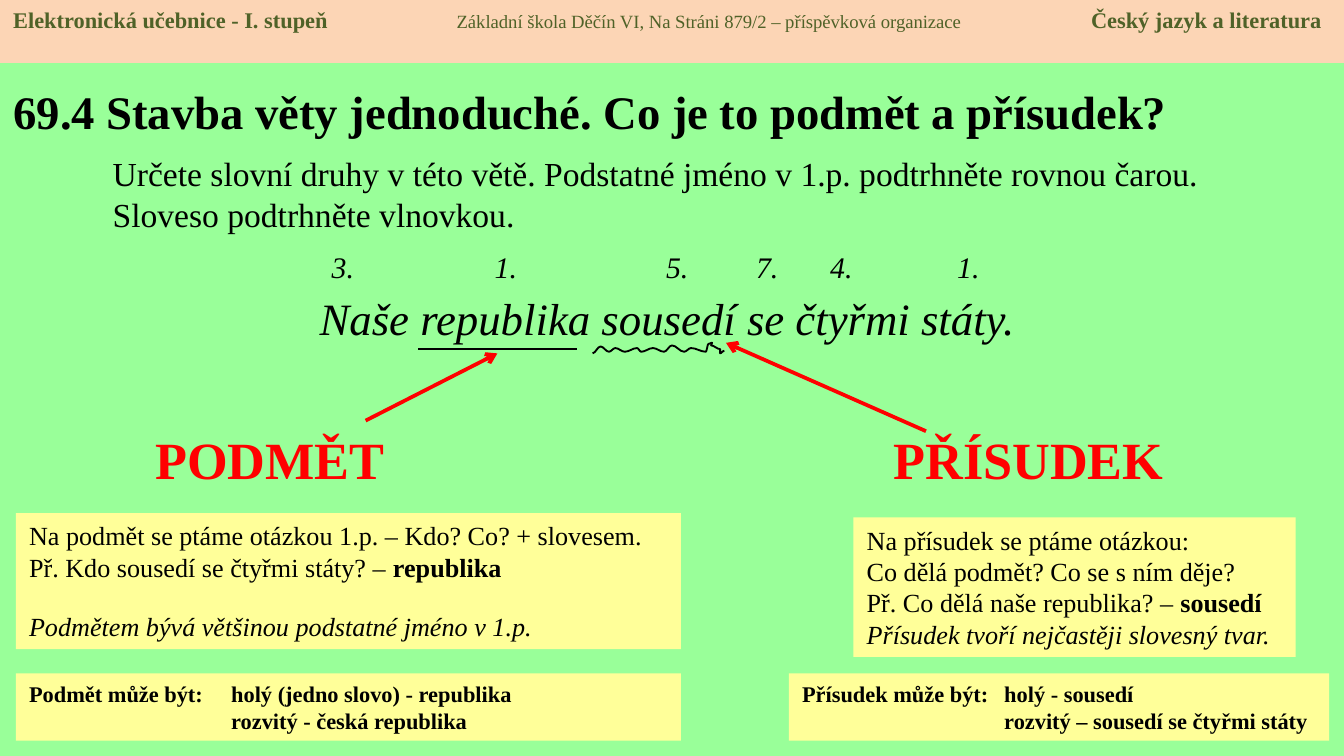
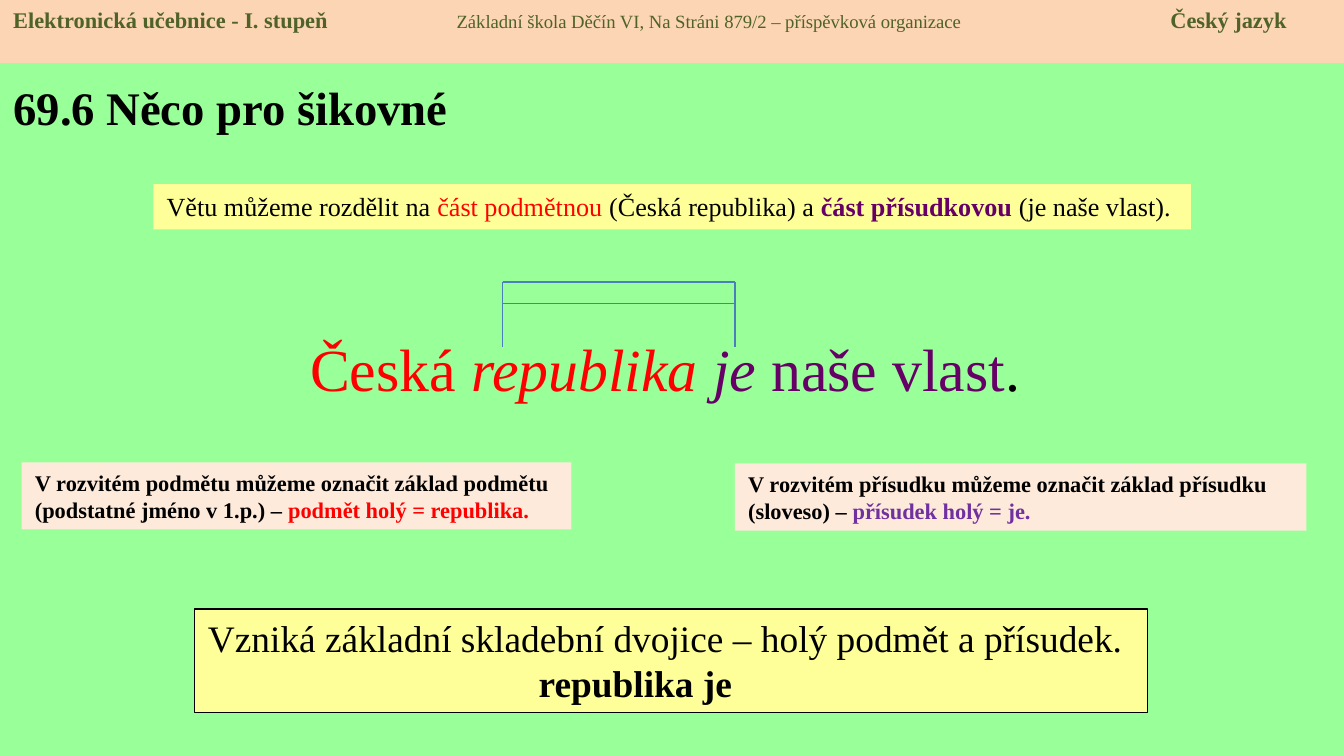
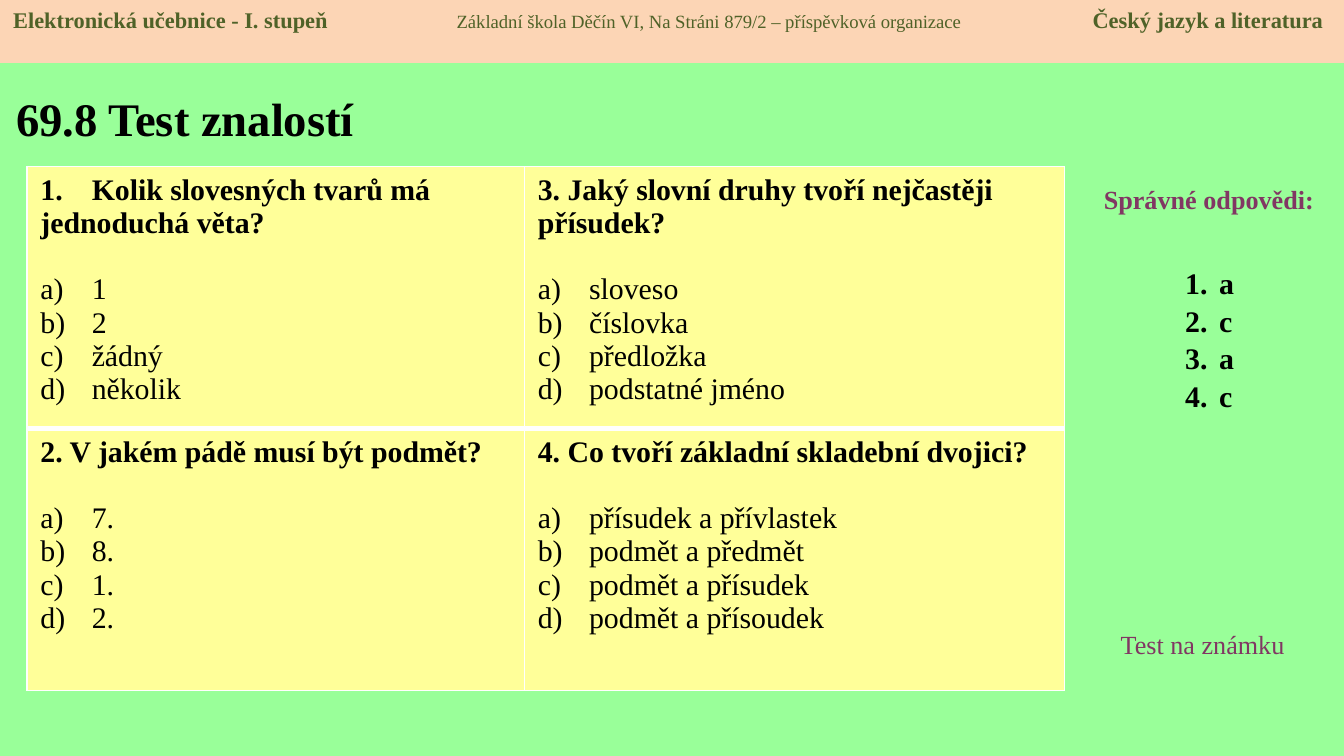
from itertools import pairwise
from math import cos, pi
from lxml.etree import SubElement
from pptx import Presentation
from pptx.dml.color import RGBColor
from pptx.enum.shapes import MSO_CONNECTOR, MSO_SHAPE
from pptx.enum.text import MSO_ANCHOR, MSO_AUTO_SIZE, PP_ALIGN
from pptx.oxml import parse_xml
from pptx.oxml.ns import nsdecls, qn
from pptx.util import Cm, Pt

MINT = RGBColor(0x99, 0xFF, 0x99)
PEACH = RGBColor(0xFC, 0xD5, 0xB5)
CREAM = RGBColor(0xFF, 0xFF, 0x99)
BLUSH = RGBColor(0xFD, 0xEA, 0xDA)
OLIVE = RGBColor(0x4F, 0x62, 0x28)
BLACK = RGBColor(0, 0, 0)
RED = RGBColor(0xFF, 0, 0)
PLUM = RGBColor(0x66, 0, 0x66)
VIOLET = RGBColor(0x70, 0x30, 0xA0)
WINE = RGBColor(0x81, 0x37, 0x63)
BLUE = RGBColor(0x4B, 0x7E, 0xBC)
FACE = "Times New Roman"
WIDE, TALL = 25.4, 14.29

SERIES = "Elektronická učebnice - I. stupeň"
SCHOOL = "Základní škola Děčín VI, Na Stráni 879/2 – příspěvková organizace"

# Each paragraph is a list of runs: (text, marks, colour), the last two optional.
PARTS = {
    "title": "69.4 Stavba věty jednoduché. Co je to podmět a přísudek?",
    "place": (0, 1.27, 24.89, 1.65),
    "topic": ("Český jazyk a literatura", 20.37),
    "boxes": [
        dict(at=(2.69, 7.95, 7.01, 1.45), size=28, ink=RED, marks="b", paras=[[("PODMĚT",)]]),
        dict(at=(16.64, 7.95, 5.82, 1.45), size=28, ink=RED, marks="b", paras=[[("PŘÍSUDEK",)]]),
        dict(at=(5.79, 5.38, 13.79, 1.27), size=24, marks="i",
             paras=[[("Naše republika sousedí se čtyřmi státy.",)]]),
        dict(at=(1.88, 2.77, 21.82, 1.8), size=18,
             paras=[[("Určete slovní druhy v této větě. Podstatné jméno v 1.p. podtrhněte "
                      "rovnou čarou. Sloveso podtrhněte vlnovkou.",)]]),
        dict(at=(6.02, 4.57, 13.79, 0.94), size=16, marks="i",
             stops=(3.08, 6.32, 8.02, 9.42, 11.82),
             paras=[[("3.\t1.\t5.\t7.\t4.\t1.",)]]),
        dict(at=(0.3, 9.7, 12.57, 2.57), fill=CREAM, size=14, gap=(2, 15), paras=[
            [("Na podmět se ptáme otázkou 1.p. – Kdo? Co? + slovesem.",)],
            [("Př. Kdo sousedí se čtyřmi státy? – ",), ("republika", "b")],
            [("Podmětem bývá většinou podstatné jméno v 1.p.", "i")]]),
        dict(at=(16.13, 9.78, 8.36, 2.64), fill=CREAM, size=14, paras=[
            [("Na přísudek se ptáme otázkou:",)],
            [("Co dělá podmět? Co se s ním děje?",)],
            [("Př. Co dělá naše republika? – ",), ("sousedí", "b")],
            [("Přísudek tvoří nejčastěji slovesný tvar.", "i")]]),
        dict(at=(0.3, 12.73, 12.57, 1.27), fill=CREAM, size=12, marks="b", stops=(3.82,), paras=[
            [("Podmět může být:\tholý (jedno slovo) - republika",)],
            [("\trozvitý - česká republika",)]]),
        dict(at=(14.91, 12.73, 10.21, 1.27), fill=CREAM, size=12, marks="b", stops=(3.82,), paras=[
            [("Přísudek může být:\tholý - sousedí",)],
            [("\trozvitý – sousedí se čtyřmi státy",)]]),
    ],
    "lines": [((7.9, 6.6, 10.9, 6.6), BLACK, 0.75, False),
              ((6.91, 7.95, 9.4, 6.68), RED, 2, True),
              ((17.5, 8.15, 13.72, 6.48), RED, 2, True)],
}
WAVE = [(11.2, 6.68), (11.35, 6.55), (11.51, 6.65), (11.63, 6.58), (11.81, 6.65),
        (12.04, 6.58), (12.12, 6.65), (12.34, 6.58), (12.55, 6.65), (12.7, 6.53),
        (12.93, 6.65), (13.06, 6.58), (13.34, 6.65), (13.39, 6.5), (13.46, 6.48),
        (13.44, 6.53), (13.61, 6.6), (13.61, 6.68), (13.69, 6.63)]

LEFT, RIGHT, TOP, MID, FOOT = 9.5, 13.89, 5.33, 5.74, 6.55
PAIR = {
    "title": "69.6 Něco pro šikovné",
    "place": (0, 1.19, 21.11, 1.65),
    "topic": ("Český jazyk", 21.87),
    "boxes": [
        dict(at=(2.9, 3.48, 19.61, 0.86), fill=CREAM, size=14, paras=[
            [("Větu můžeme rozdělit na ",), ("část podmětnou ", "", RED),
             ("(Česká republika) a ",), ("část přísudkovou ", "b", PLUM),
             ("(je naše vlast).",)]]),
        dict(at=(5.61, 6.15, 15.39, 1.63), size=32, paras=[
            [("Česká ", "", RED), ("republika ", "i", RED), ("je ", "i", PLUM),
             ("naše vlast", "", PLUM), (".",)]]),
        dict(at=(3.68, 11.51, 18.01, 1.96), fill=CREAM, edge=BLACK, size=20, stops=(6.25,), paras=[
            [("Vzniká základní skladební dvojice – holý podmět a přísudek.",)],
            [("\trepublika je", "b")]]),
        dict(at=(0.41, 8.74, 10.39, 1.27), fill=BLUSH, size=12, marks="b", paras=[
            [("V rozvitém podmětu můžeme označit základ podmětu (podstatné jméno v 1.p.) – ",),
             ("podmět holý = republika.", "", RED)]]),
        dict(at=(13.89, 8.76, 10.8, 1.27), fill=BLUSH, size=12, marks="b", paras=[
            [("V rozvitém přísudku můžeme označit základ přísudku (sloveso) – ",),
             ("přísudek holý = je.", "", VIOLET)]]),
    ],
    "lines": [(ends, BLUE, 0.75, False) for ends in (
        (LEFT, FOOT, LEFT, TOP), (RIGHT, FOOT, RIGHT, TOP),
        (LEFT, TOP, RIGHT, TOP), (LEFT, MID, RIGHT, MID))],
}

TEST = {
    "title": "69.8 Test znalostí",
    "place": (0.05, 1.4, 8.1, 1.65),
    "topic": ("Český jazyk a literatura", 20.4),
    "boxes": [
        dict(at=(20.45, 3.35, 4.8, 0.86), size=14, ink=WINE, marks="b", align=PP_ALIGN.CENTER,
             paras=[[("Správné odpovědi:",)]]),
        dict(at=(22.15, 4.88, 1.4, 4.37), size=16, marks="b", list=("arabicPeriod", 0.64, 0),
             paras=[[(key,)] for key in "acac"]),
        dict(at=(20.93, 11.76, 3.99, 0.86), size=14, ink=WINE, paras=[[("Test na známku",)]]),
    ],
    "lines": [],
}
QUIZ = [
    [(["Kolik slovesných tvarů má", "jednoduchá věta?"], ["1", "2", "žádný", "několik"]),
     (["3. Jaký slovní druhy tvoří nejčastěji", "přísudek?"],
      ["sloveso", "číslovka", "předložka", "podstatné jméno"])],
    [(["2. V jakém pádě musí být podmět?"], ["7.", "8.", "1.", "2."]),
     (["4. Co tvoří základní skladební dvojici?"],
      ["přísudek a přívlastek", "podmět a předmět", "podmět a přísudek", "podmět a přísoudek"])],
]
COLS, ROW = (9.4, 10.21), 4.95


def style(run, size, ink, marks):
    """Format one run."""
    font = run.font
    font.name, font.size, font.color.rgb = FACE, Pt(size), ink
    font.bold, font.italic = "b" in marks, "i" in marks


def number(par, kind, deep):
    """Number a paragraph with a hanging indent."""
    prop = par._p.get_or_add_pPr()
    prop.set("marL", str(Cm(deep)))
    prop.set("indent", str(-Cm(deep)))
    SubElement(prop, qn("a:buAutoNum"), type=kind)


def tabs(par, stops):
    """Set the left tab stops of a paragraph."""
    row = SubElement(par._p.get_or_add_pPr(), qn("a:tabLst"))
    for stop in stops:
        SubElement(row, qn("a:tab"), pos=str(Cm(stop)), algn="l")


def put(par, runs, size, ink=BLACK, marks=""):
    """Write runs into a paragraph."""
    for text, *more in runs:
        run = par.add_run()
        run.text = text
        extra = more[0] if more else ""
        style(run, size, more[1] if len(more) > 1 else ink, marks + extra)


def spread(frame, count):
    """Yield the first paragraph of a frame, then new ones."""
    for turn in range(count):
        yield frame.add_paragraph() if turn else frame.paragraphs[0]


def panel(slide, at, fill=None, edge=None):
    """Add a text box, or a filled rectangle, and return its frame."""
    place = [Cm(n) for n in at]
    if fill is None:
        box = slide.shapes.add_textbox(*place)
    else:
        box = slide.shapes.add_shape(MSO_SHAPE.RECTANGLE, *place)
        box.shadow.inherit = False
        box.fill.solid()
        box.fill.fore_color.rgb = fill
        if edge is None:
            box.line.fill.background()
        else:
            box.line.color.rgb, box.line.width = edge, Pt(0.75)
    frame = box.text_frame
    frame.word_wrap, frame.vertical_anchor = True, MSO_ANCHOR.TOP
    return frame


def block(slide, item):
    """Add a panel with its paragraphs."""
    frame = panel(slide, item["at"], item.get("fill"), item.get("edge"))
    paras = item["paras"]
    for par, runs in zip(spread(frame, len(paras)), paras):
        if "list" in item:
            number(par, *item["list"][:2])
            par.space_after = Pt(1)
        if "stops" in item:
            tabs(par, item["stops"])
        par.alignment = item.get("align", PP_ALIGN.LEFT)
        put(par, runs, item["size"], item.get("ink", BLACK), item.get("marks", ""))
    if "gap" in item:
        spot, room = item["gap"]
        frame.paragraphs[spot].space_before = Pt(room)


def rule(slide, ends, ink, thick, arrow):
    """Draw a line or an arrow."""
    line = slide.shapes.add_connector(MSO_CONNECTOR.STRAIGHT, *[Cm(n) for n in ends])
    line.line.color.rgb, line.line.width = ink, Pt(thick)
    if arrow:
        SubElement(line.line._get_or_add_ln(), qn("a:tailEnd"), type="arrow")
    SubElement(line._element.spPr, qn("a:effectLst"))


def wave(slide):
    """Draw the wavy underline with eased steps between its peaks."""
    dots = []
    for (x, y), (right, low) in pairwise(WAVE):
        for part in (0.25, 0.5, 0.75, 1):
            ease = (1 - cos(pi * part)) / 2
            dots.append((Cm(x + (right - x) * part), Cm(y + (low - y) * ease)))
    pen = slide.shapes.build_freeform(*[Cm(n) for n in WAVE[0]])
    pen.add_line_segments(dots, close=False)
    curve = pen.convert_to_shape()
    curve.shadow.inherit = False
    curve.fill.background()
    curve.line.color.rgb, curve.line.width = BLACK, Pt(1)


def edges(cell, top, base):
    """Give a cell white borders."""
    prop = cell._tc.get_or_add_tcPr()
    for spot, (side, thick) in enumerate(zip("LRTB", (1, 1, top, base))):
        prop.insert(spot, parse_xml(
            f'<a:ln{side} {nsdecls("a")} w="{Pt(thick)}"><a:solidFill>'
            f'<a:srgbClr val="FFFFFF"/></a:solidFill></a:ln{side}>'))


def quiz(slide):
    """Add the table of questions."""
    table = slide.shapes.add_table(2, 2, Cm(0.51), Cm(3.15), Cm(sum(COLS)), Cm(2 * ROW)).table
    table.first_row = table.horz_banding = False
    for col, wide in zip(table.columns, COLS):
        col.width = Cm(wide)
    for r, line in enumerate(QUIZ):
        table.rows[r].height = Cm(ROW)
        for c, (ask, picks) in enumerate(line):
            cell = table.cell(r, c)
            cell.fill.solid()
            cell.fill.fore_color.rgb = CREAM
            edges(cell, 3 if r else 1, 1 if r else 3)
            texts = ask + picks
            for n, par in enumerate(spread(cell.text_frame, len(texts))):
                if n >= len(ask):
                    number(par, "alphaLcParenR", 0.97)
                elif r == c == n == 0:
                    number(par, "arabicPeriod", 0.97)
                if n == len(ask):
                    par.space_before = Pt(18)
                put(par, [(texts[n],)], 16, marks="b" if n < len(ask) else "")


def page(deck, data):
    """Add a slide with its title, band, panels and lines."""
    slide = deck.slides.add_slide(deck.slide_layouts[5])
    title = slide.shapes.title
    title.left, title.top, title.width, title.height = [Cm(n) for n in data["place"]]
    frame = title.text_frame
    frame.text = data["title"]
    frame.auto_size, frame.vertical_anchor = MSO_AUTO_SIZE.NONE, MSO_ANCHOR.MIDDLE
    par = frame.paragraphs[0]
    par.alignment = PP_ALIGN.LEFT
    style(par.runs[0], 25, BLACK, "b")

    topic, stop = data["topic"]
    par = panel(slide, (0, 0, WIDE, 1.19), PEACH).paragraphs[0]
    tabs(par, (8.38, stop))
    par.alignment = PP_ALIGN.LEFT
    put(par, [(SERIES + "\t", "b")], 12, OLIVE)
    put(par, [(SCHOOL + "\t",)], 10, OLIVE)
    put(par, [(topic, "b")], 12, OLIVE)

    for item in data["boxes"]:
        block(slide, item)
    for line in data["lines"]:
        rule(slide, *line)
    return slide


def main():
    """Build the three slides."""
    deck = Presentation()
    deck.slide_width, deck.slide_height = Cm(WIDE), Cm(TALL)
    back = deck.slide_master.background.fill
    back.solid()
    back.fore_color.rgb = MINT
    wave(page(deck, PARTS))
    page(deck, PAIR)
    quiz(page(deck, TEST))
    deck.save("out.pptx")


if __name__ == "__main__":
    main()
